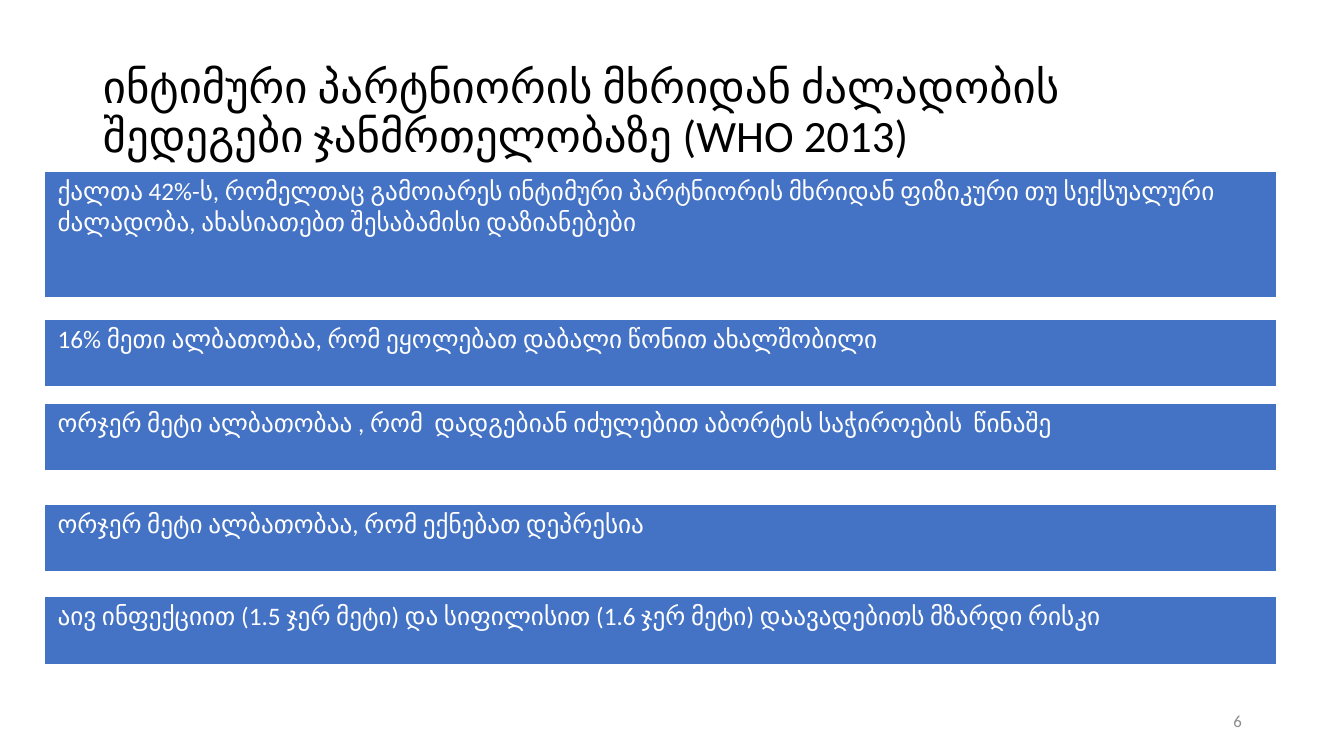
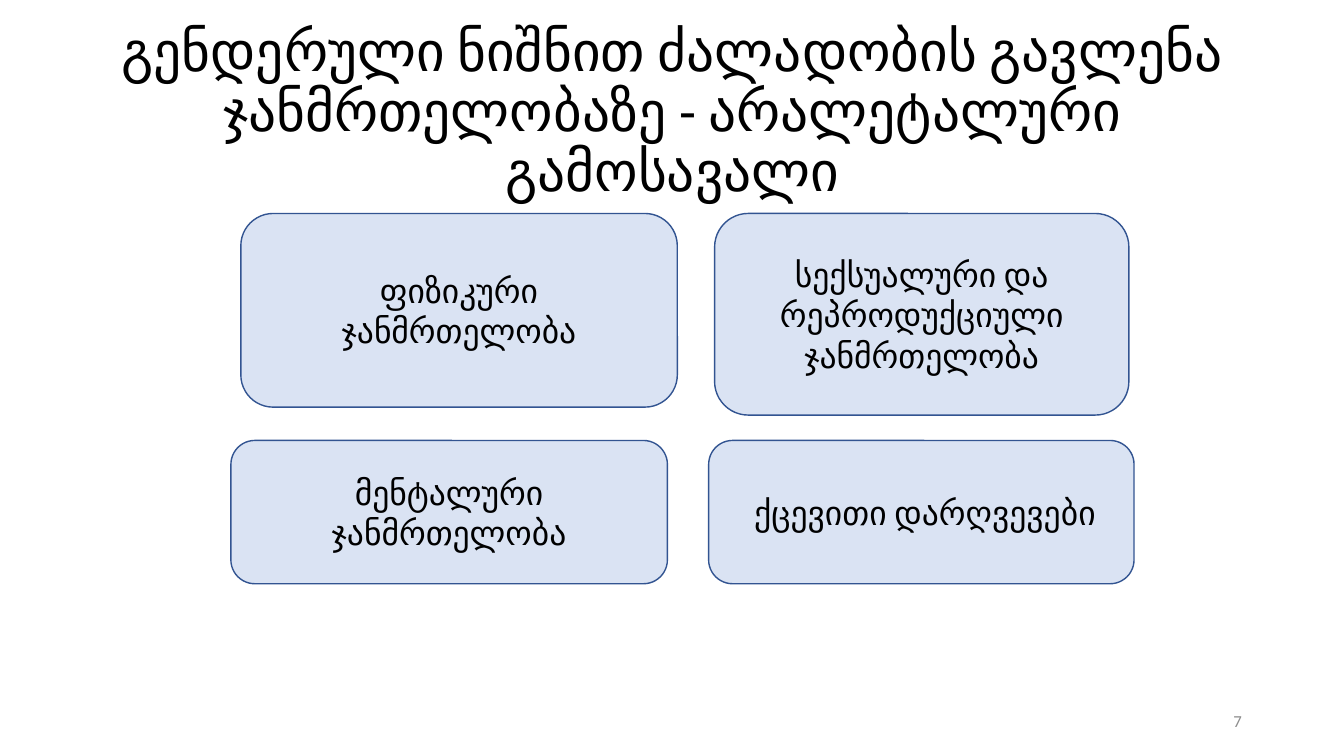
from copy import deepcopy
from dataclasses import dataclass

from pptx import Presentation
from pptx.dml.color import RGBColor
from pptx.enum.shapes import MSO_SHAPE, PP_PLACEHOLDER
from pptx.enum.text import MSO_ANCHOR, MSO_AUTO_SIZE, PP_ALIGN
from pptx.util import Cm, Pt


@dataclass(frozen=True)
class Theme:
    font: str = "Calibri"
    text: str = "000000"
    light_text: str = "FFFFFF"
    number: str = "8C8C8C"
    band: str = "4472C4"
    box: str = "DAE3F3"
    outline: str = "325491"
    title_size: float = 32
    large_title_size: float = 39.6
    box_size: float = 24
    band_size: float = 18
    number_size: float = 12


THEME = Theme()
SLIDE_SIZE = (33.87, 19.05)
TITLE_AREA = (2.34, 1.02, 29.21, 3.68)
NUMBER_AREA = (23.93, 17.65, 7.62, 1.01)
BAND_LEFT, BAND_WIDTH = 1.12, 31.04
BAND_INSET = 0.33

CONSEQUENCES_TITLE = "ინტიმური პარტნიორის მხრიდან ძალადობის შედეგები ჯანმრთელობაზე (WHO 2013)"
CONSEQUENCES = [
    (4.32, 3.18, "ქალთა 42%-ს, რომელთაც გამოიარეს ინტიმური პარტნიორის მხრიდან ფიზიკური თუ "
                 "სექსუალური ძალადობა, ახასიათებთ შესაბამისი დაზიანებები"),
    (8.05, 1.7, "16% მეთი ალბათობაა, რომ ეყოლებათ დაბალი წონით ახალშობილი"),
    (10.16, 1.7, "ორჯერ მეტი ალბათობაა , რომ  დადგებიან იძულებით აბორტის საჭიროების  წინაშე"),
    (12.7, 1.7, "ორჯერ მეტი ალბათობაა, რომ ექნებათ დეპრესია"),
    (15.04, 1.7, "აივ ინფექციით (1.5 ჯერ მეტი) და სიფილისით (1.6 ჯერ მეტი) დაავადებითს მზარდი რისკი"),
]

OUTCOMES_TITLE = "გენდერული ნიშნით ძალადობის გავლენა ჯანმრთელობაზე - არალეტალური გამოსავალი"
OUTCOMES = [
    ((6.07, 5.38, 11, 4.88), "ფიზიკური ჯანმრთელობა"),
    ((18.01, 5.38, 10.44, 5.08), "სექსუალური და რეპროდუქციული ჯანმრთელობა"),
    ((5.82, 11.1, 11, 3.61), "მენტალური ჯანმრთელობა"),
    ((17.86, 11.1, 10.72, 3.61), " ქცევითი დარღვევები"),
]


def place(shape, area):
    shape.left, shape.top, shape.width, shape.height = map(Cm, area)


def write(frame, text, size, color, alignment=PP_ALIGN.LEFT):
    frame.text = text
    paragraph = frame.paragraphs[0]
    paragraph.alignment = alignment
    paragraph.font.name = THEME.font
    paragraph.font.size = Pt(size)
    paragraph.font.bold = False
    paragraph.font.color.rgb = RGBColor.from_string(color)
    return paragraph


def fill(target, color):
    target.fill.solid()
    target.fill.fore_color.rgb = RGBColor.from_string(color)


def prepare_layout(layout):
    for placeholder in layout.placeholders:
        kind = placeholder.placeholder_format.type
        if kind == PP_PLACEHOLDER.TITLE:
            place(placeholder, TITLE_AREA)
            placeholder.text_frame.vertical_anchor = MSO_ANCHOR.MIDDLE
            placeholder.text_frame.auto_size = MSO_AUTO_SIZE.NONE
        elif kind == PP_PLACEHOLDER.SLIDE_NUMBER:
            place(placeholder, NUMBER_AREA)


def add_number(slide, number):
    source = next(
        placeholder for placeholder in slide.slide_layout.placeholders
        if placeholder.placeholder_format.type == PP_PLACEHOLDER.SLIDE_NUMBER
    )
    slide.shapes._spTree.append(deepcopy(source.element))
    frame = slide.shapes[-1].text_frame
    frame.vertical_anchor = MSO_ANCHOR.MIDDLE
    write(frame, str(number), THEME.number_size, THEME.number, PP_ALIGN.RIGHT)


def add_slide(presentation, layout, number, title, size, alignment):
    slide = presentation.slides.add_slide(layout)
    paragraph = write(slide.shapes.title.text_frame, title, size, THEME.text, alignment)
    paragraph.line_spacing = 0.9
    add_number(slide, number)
    return slide


def add_band(slide, top, height, text):
    area = map(Cm, (BAND_LEFT, top, BAND_WIDTH, height))
    table = slide.shapes.add_table(1, 1, *area).table
    table.horz_banding = False
    cell = table.cell(0, 0)
    cell.margin_left = cell.margin_right = Cm(BAND_INSET)
    fill(cell, THEME.band)
    write(cell.text_frame, text, THEME.band_size, THEME.light_text)


def add_box(slide, area, text):
    shape = slide.shapes.add_shape(MSO_SHAPE.FLOWCHART_ALTERNATE_PROCESS, *map(Cm, area))
    shape.shadow.inherit = False
    fill(shape, THEME.box)
    shape.line.color.rgb = RGBColor.from_string(THEME.outline)
    shape.line.width = Pt(1)
    shape.text_frame.word_wrap = True
    shape.text_frame.vertical_anchor = MSO_ANCHOR.MIDDLE
    write(shape.text_frame, text, THEME.box_size, THEME.text, PP_ALIGN.CENTER)


def main():
    presentation = Presentation()
    presentation.slide_width, presentation.slide_height = map(Cm, SLIDE_SIZE)
    layout = presentation.slide_layouts.get_by_name("Title Only")
    prepare_layout(layout)

    slide = add_slide(presentation, layout, 6, CONSEQUENCES_TITLE, THEME.title_size, PP_ALIGN.LEFT)
    for top, height, text in CONSEQUENCES:
        add_band(slide, top, height, text)

    slide = add_slide(presentation, layout, 7, OUTCOMES_TITLE, THEME.large_title_size, PP_ALIGN.CENTER)
    for area, text in OUTCOMES:
        add_box(slide, area, text)

    presentation.save("out.pptx")


if __name__ == "__main__":
    main()
